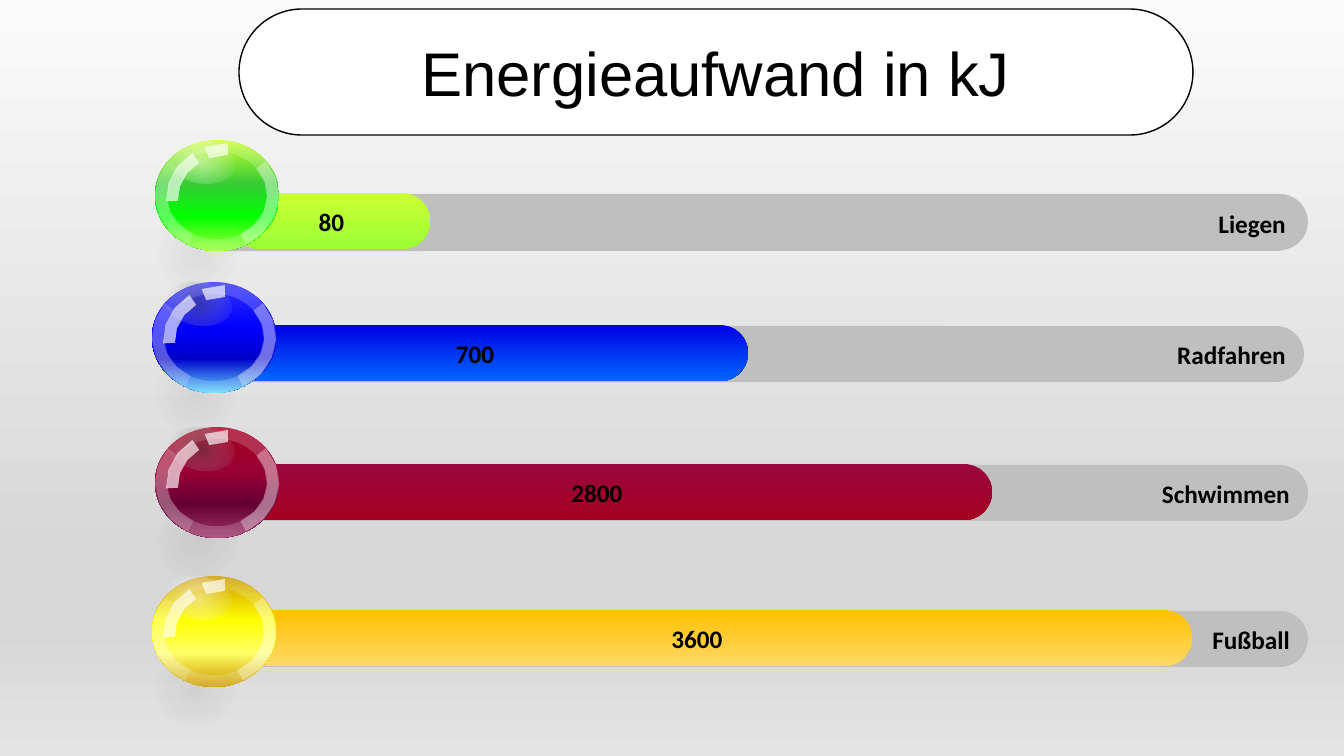
import math

import lxml.etree
import pptx
import pptx.dml.color
import pptx.enum.shapes
import pptx.enum.text
import pptx.oxml.ns
import pptx.util

SHAPE = pptx.enum.shapes.MSO_SHAPE
ALIGN = pptx.enum.text.PP_ALIGN
qn = pptx.oxml.ns.qn

BAR_HEIGHT = 56
TRACK_WIDTH = 1106
ORB_WIDTH, ORB_HEIGHT, RING = 124, 111, 12

ROWS = [
    {
        "label": "Liegen", "value": "80",
        "track": (198, 195), "bar": (233, 193, 197), "orb": (155, 140),
        "bar_colors": ("CCFF33", "99FF33"),
        "orb_colors": ("CCFF33", "33CC33", "00FF00", "99FF33"), "glow": "FFFFFF",
    },
    {
        "label": "Radfahren", "value": "700",
        "track": (198, 326), "bar": (202, 325, 546), "orb": (152, 282),
        "bar_colors": ("0000E5", "0066FF"),
        "orb_colors": ("3333FF", "0000FF", "0000CC", "61D6FF"), "glow": "525252",
    },
    {
        "label": "Schwimmen", "value": "2800",
        "track": (202, 465), "bar": (202, 464, 790), "orb": (155, 427),
        "bar_colors": ("9A083D", "A50021"),
        "orb_colors": ("A50021", "990033", "660033", "993366"), "glow": "525252",
    },
    {
        "label": "Fußball", "value": "3600",
        "track": (202, 611), "bar": (202, 610, 990), "orb": (152, 576),
        "bar_colors": ("FFC000", "FFD966"),
        "orb_colors": ("CC9900", "FFFF00", "FFFF66", "CC9900"), "glow": "FFFFFF",
    },
]


def px(length):
    return pptx.util.Emu(round(length * 12192000 / 1344))


def color(value):
    return pptx.dml.color.RGBColor.from_string(value)


def add_alpha(color_element, percent):
    alpha = lxml.etree.SubElement(color_element, qn("a:alpha"))
    alpha.set("val", str(percent * 1000))


def make_gradient(element, stops, radial=False):
    solid = element.find(".//" + qn("a:solidFill"))
    gradient = lxml.etree.Element(qn("a:gradFill"), rotWithShape="1")
    stop_list = lxml.etree.SubElement(gradient, qn("a:gsLst"))
    for position, value, opacity in stops:
        stop = lxml.etree.SubElement(stop_list, qn("a:gs"), pos=str(position * 1000))
        stop_color = lxml.etree.SubElement(stop, qn("a:srgbClr"), val=value)
        if opacity < 100:
            add_alpha(stop_color, opacity)
    if radial:
        circle = lxml.etree.SubElement(gradient, qn("a:path"), path="circle")
        sides = dict.fromkeys("ltrb", "50000")
        lxml.etree.SubElement(circle, qn("a:fillToRect"), **sides)
    else:
        lxml.etree.SubElement(gradient, qn("a:lin"), ang="5400000", scaled="0")
    solid.getparent().replace(solid, gradient)


def write(box, text, size=18, font="Calibri", bold=True, align=ALIGN.CENTER):
    frame = box.text_frame
    frame.word_wrap = True
    frame.vertical_anchor = pptx.enum.text.MSO_ANCHOR.MIDDLE
    para = frame.paragraphs[0]
    para.alignment = align
    span = para.add_run()
    span.text = text
    span.font.name = font
    span.font.size = pptx.util.Pt(size)
    span.font.bold = bold
    span.font.color.rgb = color("000000")


class Painter:
    font = "Arial"
    track_color = "BFBFBF"
    gloss_color = "FFFFFF"

    def __init__(self, deck):
        self.page = deck.slides.add_slide(deck.slide_layouts[6])

    def background(self, stops):
        fill = self.page.background.fill
        fill.solid()
        fill.fore_color.rgb = color(stops[0][1])
        make_gradient(self.page.background._cSld, stops)

    def finish(self, box, fill="FFFFFF", opacity=100, stops=None, radial=False):
        box.shadow.inherit = False
        box.fill.solid()
        box.fill.fore_color.rgb = color(fill)
        box.line.fill.background()
        if stops:
            make_gradient(box._element.spPr, stops, radial)
        elif opacity < 100:
            add_alpha(box._element.spPr.find(".//" + qn("a:srgbClr")), opacity)
        return box

    def shape(self, kind, left, top, width, height, adjust=None, **style):
        box = self.page.shapes.add_shape(kind, px(left), px(top), px(width), px(height))
        if adjust is not None:
            box.adjustments[0] = adjust
        return self.finish(box, **style)

    def pill(self, left, top, width, height=BAR_HEIGHT, **style):
        return self.shape(SHAPE.ROUNDED_RECTANGLE, left, top, width, height, 0.5, **style)

    def ring_slices(self, center_x, center_y, slices, opacity):
        def rim(inset, angles):
            return [
                (px(center_x + (ORB_WIDTH / 2 - inset) * math.cos(math.radians(angle))),
                 px(center_y + (ORB_HEIGHT / 2 - inset) * math.sin(math.radians(angle))))
                for angle in angles
            ]

        builder = None
        for start, end in slices:
            steps = math.ceil((end - start) / 22)
            angles = [start + (end - start) * step / steps for step in range(steps + 1)]
            points = rim(0, angles) + rim(RING, reversed(angles))
            if builder is None:
                builder = self.page.shapes.build_freeform(*points[0])
            else:
                builder.move_to(*points[0])
            builder.add_line_segments(points[1:], close=True)
        self.finish(builder.convert_to_shape(), self.gloss_color, opacity)

    def orb(self, left, top, colors, glow):
        self.shape(SHAPE.OVAL, left - 32, top + 61, 150, 105, radial=True,
                   stops=[(0, "000000", 6), (45, "000000", 0), (100, "000000", 0)])
        frame = (left, top, ORB_WIDTH, ORB_HEIGHT)
        self.shape(SHAPE.OVAL, *frame,
                   stops=[(place, value, 100) for place, value in zip((0, 40, 69, 100), colors)])
        self.shape(SHAPE.DONUT, *frame, adjust=0.106, fill=self.gloss_color, opacity=19)
        center_x, center_y = left + ORB_WIDTH / 2, top + ORB_HEIGHT / 2
        self.ring_slices(center_x, center_y, [(-38, 62)], 31)
        self.ring_slices(center_x, center_y, [(118, 218)], 18)
        shine = self.shape(SHAPE.OVAL, left + 13, top, 67, 43, radial=True,
                           stops=[(0, glow, 45), (100, "F0F0F0", 0)])
        shine.rotation = 9.2
        self.ring_slices(center_x + 11, center_y + 3, [(177, 235), (248, 270)], 66)

    def track(self, left, top, label=None):
        box = self.pill(left, top, TRACK_WIDTH, fill=self.track_color)
        if label:
            write(box, label, align=ALIGN.RIGHT)

    def bar(self, left, top, width, value, colors):
        stops = [(0, colors[0], 100), (100, colors[1], 100)]
        write(self.pill(left, top, width, stops=stops), value)

    def title(self, text):
        box = self.pill(239, 9, 954, 126)
        box.line.color.rgb = color("000000")
        box.line.width = pptx.util.Pt(1)
        write(box, text, size=44, font=self.font, bold=False)


def main():
    deck = pptx.Presentation()
    deck.slide_width, deck.slide_height = px(1344), px(756)
    painter = Painter(deck)
    painter.background([(0, "FAFAFA", 100), (74, "D7D7D7", 100),
                        (83, "D7D7D7", 100), (100, "E4E4E4", 100)])
    painter.track(202, 194)
    for row in ROWS:
        painter.track(*row["track"], row["label"])
        painter.bar(*row["bar"], row["value"], row["bar_colors"])
    for row in ROWS:
        painter.orb(*row["orb"], row["orb_colors"], row["glow"])
    painter.title("Energieaufwand in kJ")
    deck.save("out.pptx")


if __name__ == "__main__":
    main()
